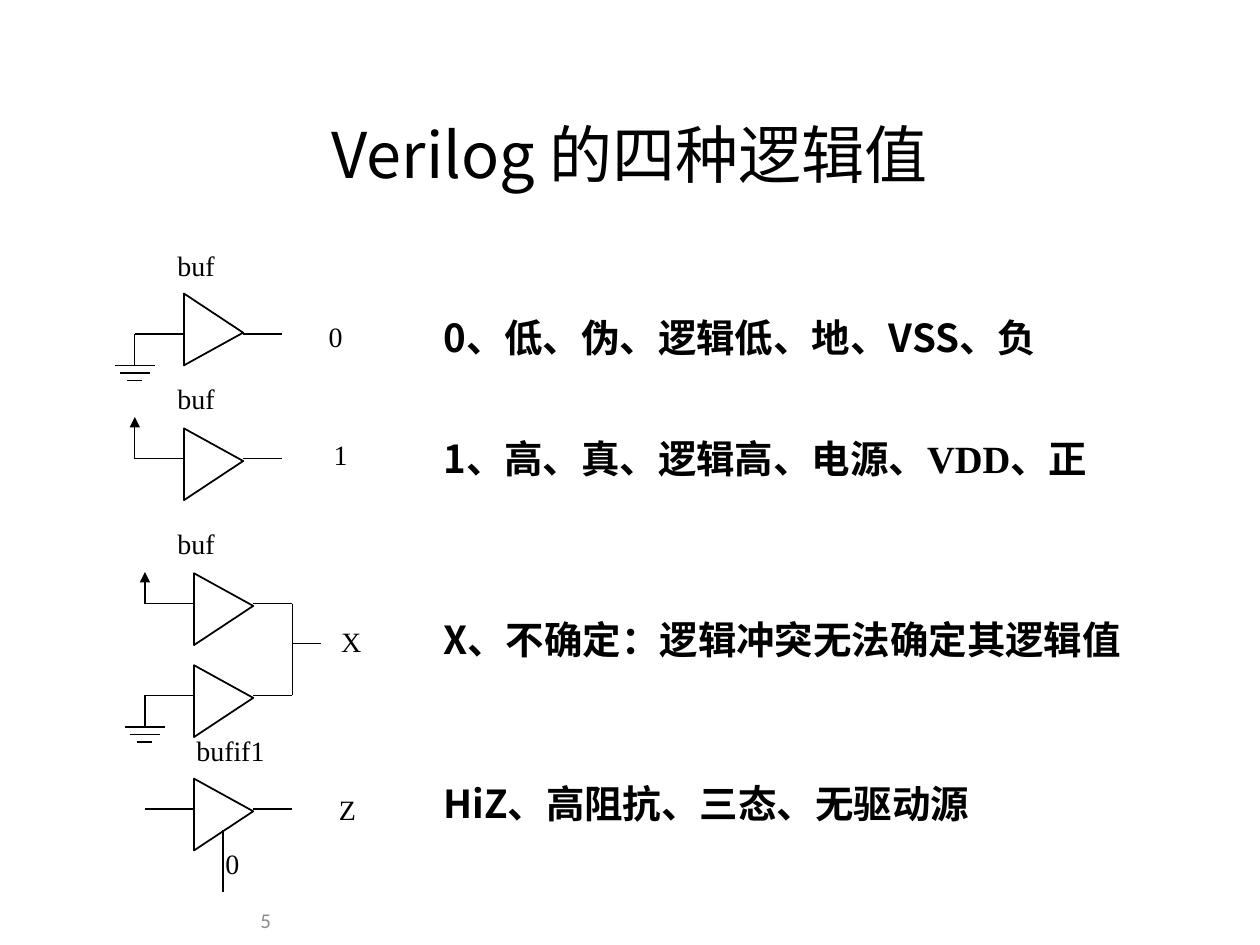
from dataclasses import dataclass

from lxml.etree import SubElement
from pptx import Presentation
from pptx.dml.color import RGBColor
from pptx.enum.shapes import MSO_CONNECTOR, MSO_SHAPE
from pptx.enum.text import MSO_ANCHOR, MSO_AUTO_SIZE, PP_ALIGN
from pptx.oxml.ns import qn
from pptx.util import Inches, Pt

INK = "000000"
PAPER = "FFFFFF"
SANS = "Noto Sans CJK SC"
SERIF = "Times New Roman"


@dataclass
class Gate:
    """A buffer with its wires at height y."""
    x: float
    y: float
    rise: float = 0.19
    tip: float = 0.455


@dataclass
class Label:
    """A short note on the diagram."""
    text: str
    x: float
    y: float
    width: float


@dataclass
class Value:
    """The meaning of one logic value, as runs of text and font."""
    y: float
    runs: list


GATES = [Gate(1.41, 2.65, 0.27, 0.545), Gate(1.41, 3.64), Gate(1.49, 4.79),
         Gate(1.49, 5.52), Gate(1.49, 6.42)]
LABELS = [
    Label("0", 2.51, 2.49, 0.62), Label("1", 2.55, 3.42, 0.54),
    Label("X", 2.61, 4.91, 0.47), Label("Z", 2.59, 6.24, 0.62),
    Label("0", 1.69, 6.67, 0.62), Label("buf", 1.31, 1.92, 1.01),
    Label("buf", 1.31, 2.98, 1.01), Label("buf", 1.31, 4.13, 1.01),
    Label("bufif1", 1.46, 5.77, 1.01),
]
VALUES = [
    Value(2.44, [("0、低、伪、逻辑低、地、VSS、负", SANS)]),
    Value(3.4, [("1、高、真、逻辑高、电源、", SANS), ("VDD、正", SERIF)]),
    Value(4.84, [("X、不确定：逻辑冲突无法确定其逻辑值", SANS)]),
    Value(6.14, [("HiZ、高阻抗、三态、无驱动源", SANS)]),
]


def tint(code: str) -> RGBColor:
    """Turn a hex string into a colour."""
    return RGBColor.from_string(code)


def place(shape, x: float, y: float, width: float, height: float) -> None:
    """Move and size a shape in inches."""
    shape.left, shape.top = Inches(x), Inches(y)
    shape.width, shape.height = Inches(width), Inches(height)


def write(shape, runs: list, *, size: float, color: str = INK, bold: bool = False,
          align=PP_ALIGN.LEFT, anchor=MSO_ANCHOR.TOP, hang: float = 0,
          lead: float = 1.0, fit=MSO_AUTO_SIZE.NONE, fill: str = "") -> None:
    """Fill a shape with one paragraph of formatted runs."""
    if fill:
        shape.fill.solid()
        shape.fill.fore_color.rgb = tint(fill)
    frame = shape.text_frame
    frame.word_wrap, frame.auto_size = True, fit
    frame.vertical_anchor = anchor
    para = frame.paragraphs[0]
    para.alignment, para.line_spacing = align, lead
    if hang:
        props = para._p.get_or_add_pPr()
        props.set("marL", str(Inches(hang)))
        props.set("indent", str(-Inches(hang)))
    for text, face in runs:
        run = para.add_run()
        run.text = text
        font = run.font
        font.name, font.size, font.bold = face, Pt(size), bold
        font.color.rgb = tint(color)
        east = SubElement(font._element, qn("a:ea"))
        east.set("typeface", SANS)


def add_text(slide, runs: list, x: float, y: float, width: float, height: float,
             **style) -> None:
    """Add a text box with one formatted paragraph."""
    box = slide.shapes.add_textbox(0, 0, 0, 0)
    place(box, x, y, width, height)
    write(box, runs, **style)


def add_wire(slide, x1: float, y1: float, x2: float, y2: float,
             weight: float = 0.75, arrow: bool = False) -> None:
    """Draw a straight wire, with an arrowhead at its end on request."""
    wire = slide.shapes.add_connector(
        MSO_CONNECTOR.STRAIGHT, Inches(x1), Inches(y1), Inches(x2), Inches(y2))
    wire.line.width = Pt(weight)
    wire.line.color.rgb = tint(INK)
    if arrow:
        SubElement(wire.line._get_or_add_ln(), qn("a:tailEnd")).set("type", "triangle")
    SubElement(wire._element.spPr, qn("a:effectLst"))


def add_gate(slide, gate: Gate) -> None:
    """Draw a buffer with its input and output wires."""
    body = slide.shapes.add_shape(MSO_SHAPE.ISOSCELES_TRIANGLE, 0, 0, 0, 0)
    place(body, gate.x, gate.y - gate.rise, 0.57, 0.47)
    body.rotation = 90
    body.adjustments[0] = gate.tip
    body.shadow.inherit = False
    body.fill.background()
    body.line.width = Pt(1)
    body.line.color.rgb = tint(INK)
    for start, end in ((0.52, 0.83), (0.05, -0.34)):
        add_wire(slide, gate.x + start, gate.y, gate.x + end, gate.y, weight=1)


def add_ground(slide, x: float, y: float) -> None:
    """Draw a ground sign hanging from a wire end."""
    add_wire(slide, x, y, x, y + 0.25)
    for drop, half in ((0.25, 0.16), (0.31, 0.12), (0.37, 0.06)):
        add_wire(slide, x - half, y + drop, x + half, y + drop)


def main() -> None:
    """Build the slide and save it."""
    deck = Presentation()
    deck.slide_width, deck.slide_height = Inches(10), Inches(7.5)
    slide = deck.slides.add_slide(deck.slide_layouts[5])
    title = slide.shapes.title
    place(title, 1.83, 0.67, 6.33, 1.17)
    write(title, [("Verilog 的四种逻辑值", SANS)], size=36, align=PP_ALIGN.CENTER,
          anchor=MSO_ANCHOR.MIDDLE, lead=0.9, fill=PAPER)
    add_text(slide, [("5", "Calibri")], 0, 7.1, 2.25, 0.4, size=12, color="8C8C8C",
             align=PP_ALIGN.RIGHT, anchor=MSO_ANCHOR.MIDDLE)
    for gate in GATES:
        add_gate(slide, gate)
    add_ground(slide, 1.07, 2.65)
    add_ground(slide, 1.15, 5.52)
    add_wire(slide, 1.07, 3.64, 1.07, 3.31, arrow=True)
    add_wire(slide, 1.15, 4.79, 1.15, 4.54, arrow=True)
    add_wire(slide, 2.32, 4.79, 2.32, 5.52)
    add_wire(slide, 2.32, 5.11, 2.55, 5.11)
    add_wire(slide, 1.77, 6.59, 1.77, 7.08)
    for label in LABELS:
        add_text(slide, [(label.text, SERIF)], label.x, label.y, label.width, 0.37,
                 size=16, fit=MSO_AUTO_SIZE.SHAPE_TO_FIT_TEXT)
    for value in VALUES:
        add_text(slide, value.runs, 3.42, value.y, 5.58, 0.47, size=22, bold=True,
                 align=PP_ALIGN.JUSTIFY, hang=0.38, fill=PAPER,
                 fit=MSO_AUTO_SIZE.SHAPE_TO_FIT_TEXT)
    deck.save("out.pptx")


if __name__ == "__main__":
    main()
